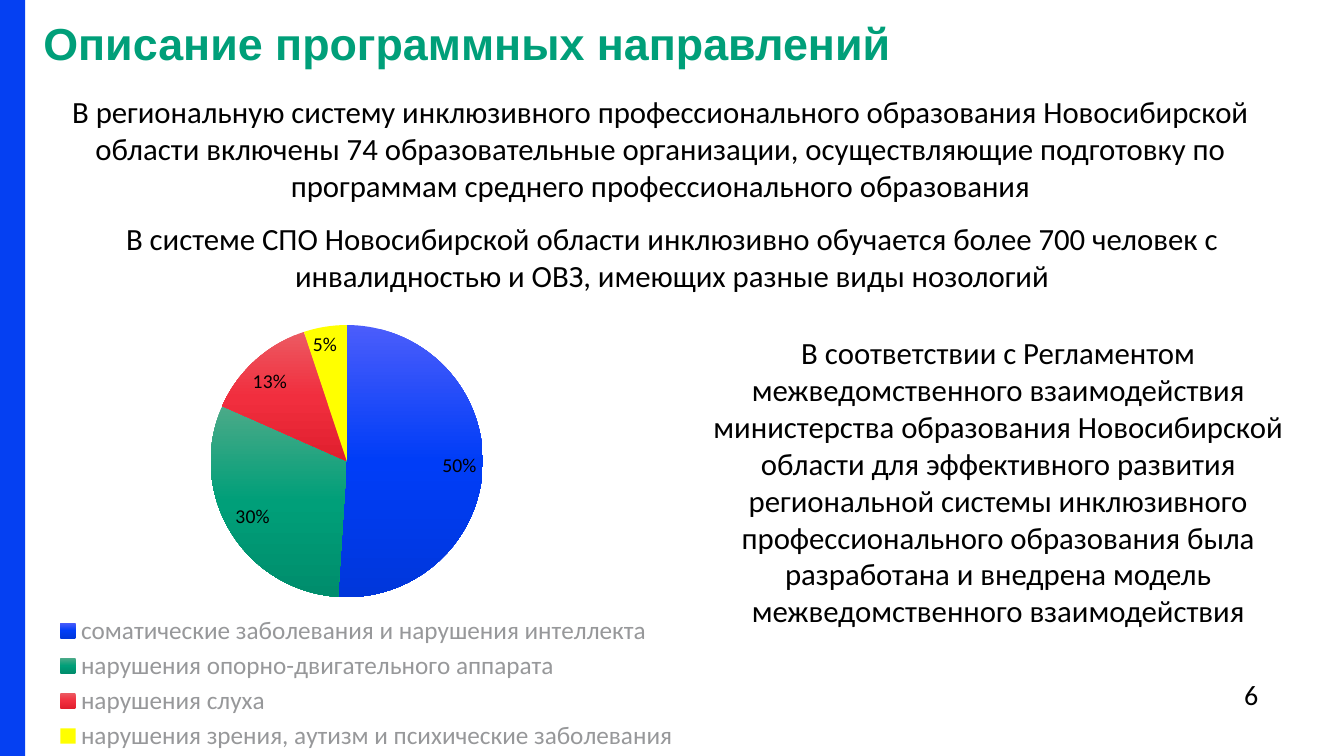
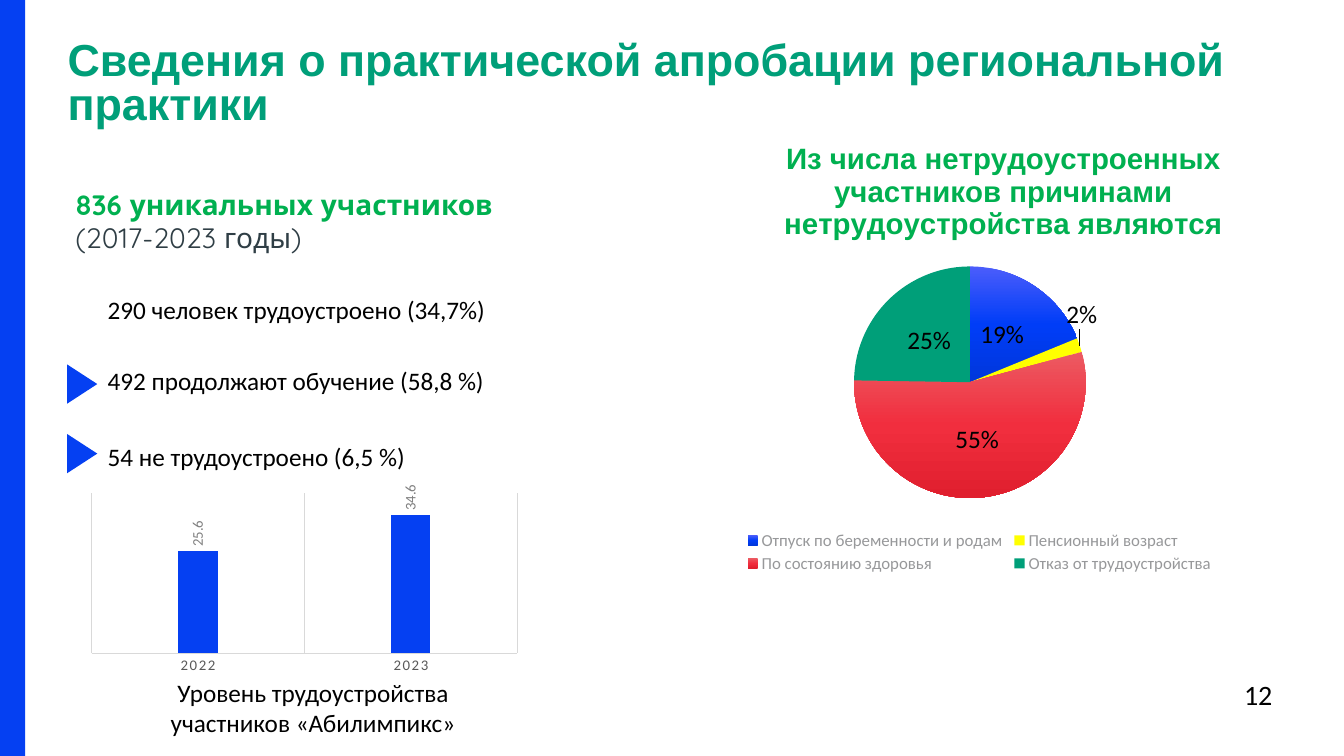
import copy

import lxml.etree
import pptx
import pptx.chart.data
import pptx.dml.color
import pptx.enum.chart
import pptx.enum.shapes
import pptx.enum.text
import pptx.oxml.ns
import pptx.util

Inches = pptx.util.Inches
Pt = pptx.util.Pt
qn = pptx.oxml.ns.qn
LabelPosition = pptx.enum.chart.XL_LABEL_POSITION
CENTER = pptx.enum.text.PP_ALIGN.CENTER

BLUE = "0540F2"
GREEN = "009F79"
ACCENT = "00B050"
BLACK = "000000"
LEGEND_GREY = "97989A"
GRID_GREY = "D9D9D9"
YELLOW = "FFFF00"
BLUE_FADE = ("4B5DFB", "003DF7", "0037DB")
GREEN_FADE = ("4BAA88", "009F79", "008D6C")
RED_FADE = ("EC5A62", "F12E3E", "E01F2E")


def rgb(value):
    return pptx.dml.color.RGBColor.from_string(value)


def style_font(font, size, color, name="Calibri", bold=False):
    font.size = Pt(size)
    font.name = name
    font.bold = bold
    font.color.rgb = rgb(color)


def add_text(slide, box, text, size, color=BLACK, name="Calibri", bold=False,
             align=None, wrap=True):
    frame = slide.shapes.add_textbox(*map(Inches, box)).text_frame
    frame.word_wrap = wrap
    frame.text = text
    for paragraph in frame.paragraphs:
        paragraph.alignment = align
        for run in paragraph.runs:
            style_font(run.font, size, color, name, bold)
    return frame


def add_figure(slide, preset, box, rotation=0):
    figure = slide.shapes.add_shape(preset, *map(Inches, box))
    figure.shadow.inherit = False
    figure.fill.solid()
    figure.fill.fore_color.rgb = rgb(BLUE)
    figure.line.fill.background()
    figure.rotation = rotation


def add_page(deck, title, title_box, number):
    slide = deck.slides.add_slide(deck.slide_layouts[6])
    add_text(slide, (12.24, 6.67, 0.53, 0.44), number, 20, wrap=False)
    heading = add_text(slide, title_box, title, 32, GREEN, "Arial", True)
    heading.margin_left = heading.margin_right = 0
    heading.margin_top = heading.margin_bottom = 0
    heading.paragraphs[0].line_spacing = Pt(32)
    add_figure(slide, pptx.enum.shapes.MSO_SHAPE.RECTANGLE, (0, 0, 0.25, 7.5))
    return slide


def manual_layout(settings):
    layout = lxml.etree.Element(qn("c:layout"))
    manual = lxml.etree.SubElement(layout, qn("c:manualLayout"))
    for key, value in settings.items():
        lxml.etree.SubElement(manual, qn("c:" + key)).set("val", str(value))
    return layout


def place(chart, part_tag, fractions):
    part = chart.element.find(".//" + qn(part_tag))
    for old in part.findall(qn("c:layout")):
        part.remove(old)
    settings = {"layoutTarget": "inner"} if part_tag == "c:plotArea" else {}
    settings.update(xMode="edge", yMode="edge")
    settings.update(zip("xywh", fractions))
    layout = manual_layout(settings)
    overlay = part.find(qn("c:overlay"))
    if overlay is None:
        part.insert(0, layout)
    else:
        overlay.addprevious(layout)


def add_chart(slide, kind, box, values, plot):
    data = pptx.chart.data.CategoryChartData()
    data.categories = list(values)
    data.add_series("Series 1", list(values.values()))
    chart = slide.shapes.add_chart(kind, *map(Inches, box), data).chart
    style_font(chart.font, 10, BLACK)
    chart.has_title = False
    chart.has_legend = False
    place(chart, "c:plotArea", plot)
    return chart


def add_labels(chart, size, color, position, number_format):
    labels = chart.plots[0].series[0].data_labels
    labels.show_value = True
    labels.show_percentage = False
    labels.number_format = number_format
    labels.number_format_is_linked = False
    labels.position = position
    style_font(labels.font, size, color)


def move_label(chart, index, size, position, number_format, shift):
    label = chart.plots[0].series[0].points[index].data_label
    style_font(label.font, size, BLACK)
    label.position = position
    marker = chart.element.xpath(f'.//c:dLbl/c:idx[@val="{index}"]')[0]
    form = lxml.etree.Element(qn("c:numFmt"))
    form.set("formatCode", number_format)
    form.set("sourceLinked", "0")
    marker.addnext(form)
    marker.addnext(manual_layout(dict(zip("xy", shift))))


def fill_slice(chart, index, paint):
    fill = chart.plots[0].series[0].points[index].format.fill
    if isinstance(paint, str):
        fill.solid()
        fill.fore_color.rgb = rgb(paint)
        return
    fill.gradient()
    fill.gradient_angle = 270
    stops = chart.element.xpath(f'.//c:dPt[c:idx/@val="{index}"]//a:gsLst')[0]
    stops.insert(1, copy.deepcopy(stops[0]))
    for step, (stop, color) in enumerate(zip(fill.gradient_stops, paint)):
        stop.color.rgb = rgb(color)
        stop.position = step / 2


def add_pie(slide, box, values, paints, plot, legend, legend_size):
    chart = add_chart(slide, pptx.enum.chart.XL_CHART_TYPE.PIE, box, values, plot)
    chart.plots[0].vary_by_categories = True
    for index, paint in enumerate(paints):
        fill_slice(chart, index, paint)
    chart.has_legend = True
    chart.legend.position = pptx.enum.chart.XL_LEGEND_POSITION.BOTTOM
    chart.legend.include_in_layout = False
    style_font(chart.legend.font, legend_size, LEGEND_GREY)
    place(chart, "c:legend", legend)
    return chart


def add_conditions_pie(slide):
    conditions = {
        "соматические заболевания и нарушения интеллекта": 0.5,
        "нарушения опорно-двигательного аппарата": 0.3,
        "нарушения слуха": 0.13,
        "нарушения зрения, аутизм и психические заболевания": 0.05,
    }
    chart = add_pie(slide, (0.45, 3, 6.5, 4.5), conditions,
                    (BLUE_FADE, GREEN_FADE, RED_FADE, YELLOW),
                    (0.25, 0.05, 0.42, 0.6), (0.01, 0.68, 0.96, 0.32), 18)
    add_labels(chart, 14, BLACK, LabelPosition.INSIDE_END, "0%")
    for index, shift in ((2, (-0.01, 0.01)), (3, (-0.02, 0))):
        move_label(chart, index, 14, LabelPosition.INSIDE_END, "0%", shift)


def add_reasons_pie(slide):
    reasons = {
        "Отпуск по беременности и родам": 19,
        "Пенсионный возраст": 2,
        "По состоянию здоровья": 55,
        "Отказ от трудоустройства": 25,
    }
    chart = add_pie(slide, (6.67, 1.29, 6.21, 4.43), reasons,
                    (BLUE_FADE, YELLOW, RED_FADE, GREEN),
                    (0.29, 0.3, 0.37, 0.53), (0.11, 0.89, 0.76, 0.11), 12)
    percent = '0"%"'
    add_labels(chart, 18, BLACK, LabelPosition.CENTER, percent)
    move_label(chart, 1, 18, LabelPosition.OUTSIDE_END, percent, (-0.03, -0.03))
    chart.has_title = True
    caption = chart.chart_title.text_frame
    caption.text = ("Из числа нетрудоустроенных участников причинами "
                    "нетрудоустройства являются")
    style_font(caption.paragraphs[0].runs[0].font, 21, ACCENT, "Arial", True)
    place(chart, "c:title", (0.17, 0.01))


def add_employment_columns(slide):
    chart = add_chart(slide, pptx.enum.chart.XL_CHART_TYPE.COLUMN_CLUSTERED,
                      (0.82, 4.81, 4.4, 1.92), {"2022": 25.6, "2023": 34.6},
                      (0.02, 0.04, 0.96, 0.83))
    columns = chart.plots[0]
    columns.vary_by_categories = False
    columns.gap_width = 444
    columns.overlap = -90
    columns.series[0].format.fill.solid()
    columns.series[0].format.fill.fore_color.rgb = rgb(BLUE)
    add_labels(chart, 10.6, "808080", LabelPosition.OUTSIDE_END, "0.0")
    turned = chart.element.xpath(".//c:dLbls/c:txPr/a:bodyPr")[0]
    turned.set("rot", "-5400000")
    turned.set("vert", "horz")

    share = chart.value_axis
    share.minimum_scale, share.maximum_scale = 0, 40
    share.has_major_gridlines = False
    share.visible = False

    years = chart.category_axis
    years.has_major_gridlines = True
    years.major_tick_mark = pptx.enum.chart.XL_TICK_MARK.NONE
    style_font(years.tick_labels.font, 10.6, "595959")
    chart.element.xpath(".//c:catAx/c:txPr//a:defRPr")[0].set("spc", "120")
    for line in (years.format.line, years.major_gridlines.format.line):
        line.color.rgb = rgb(GRID_GREY)
        line.width = Pt(0.75)


def build_programme(deck):
    slide = add_page(deck, "Описание программных направлений",
                     (0.43, 0.25, 12.7, 0.57), "6")
    statements = (
        ((0.12, 0.87, 12.86, 1.21),
         "В региональную систему инклюзивного профессионального образования "
         "Новосибирской области включены 74 образовательные организации, "
         "осуществляющие подготовку по программам среднего профессионального "
         "образования"),
        ((0.59, 2.13, 12.15, 0.84),
         "В системе СПО Новосибирской области инклюзивно обучается более 700 "
         "человек с инвалидностью и ОВЗ, имеющих разные виды нозологий"),
        ((6.93, 3.26, 5.94, 3.06),
         "В соответствии с Регламентом межведомственного взаимодействия "
         "министерства образования Новосибирской области для эффективного "
         "развития региональной системы инклюзивного профессионального "
         "образования была разработана и внедрена модель межведомственного "
         "взаимодействия"),
    )
    for box, statement in statements:
        add_text(slide, box, statement, 22, align=CENTER)
    add_conditions_pie(slide)


def build_results(deck):
    slide = add_page(deck, "Сведения о практической апробации региональной практики",
                     (0.67, 0.4, 11.93, 0.9), "12")
    participants = add_text(slide, (0.65, 1.81, 4.62, 0.77),
                            "836 уникальных участников\n(2017-2023 годы)",
                            20, ACCENT, "Quicksand", True)
    style_font(participants.paragraphs[1].runs[0].font, 20, "2F3E45", "Quicksand")
    outcomes = ((2.87, "290 человек трудоустроено (34,7%)"),
                (3.58, "492 продолжают обучение (58,8 %)"),
                (4.33, "54 не трудоустроено (6,5 %)"))
    for top, outcome in outcomes:
        add_text(slide, (0.97, top, 3.99, 0.4), outcome, 18, wrap=False)
    for top in (3.66, 4.35):
        add_figure(slide, pptx.enum.shapes.MSO_SHAPE.ISOSCELES_TRIANGLE,
                   (0.62, top, 0.39, 0.3), 90)
    add_reasons_pie(slide)
    add_text(slide, (1.21, 6.67, 3.79, 0.71),
             "Уровень трудоустройства участников «Абилимпикс»", 18, align=CENTER)
    add_employment_columns(slide)


def main():
    deck = pptx.Presentation()
    deck.slide_width = Inches(13.33)
    deck.slide_height = Inches(7.5)
    build_programme(deck)
    build_results(deck)
    deck.save("out.pptx")


if __name__ == "__main__":
    main()
